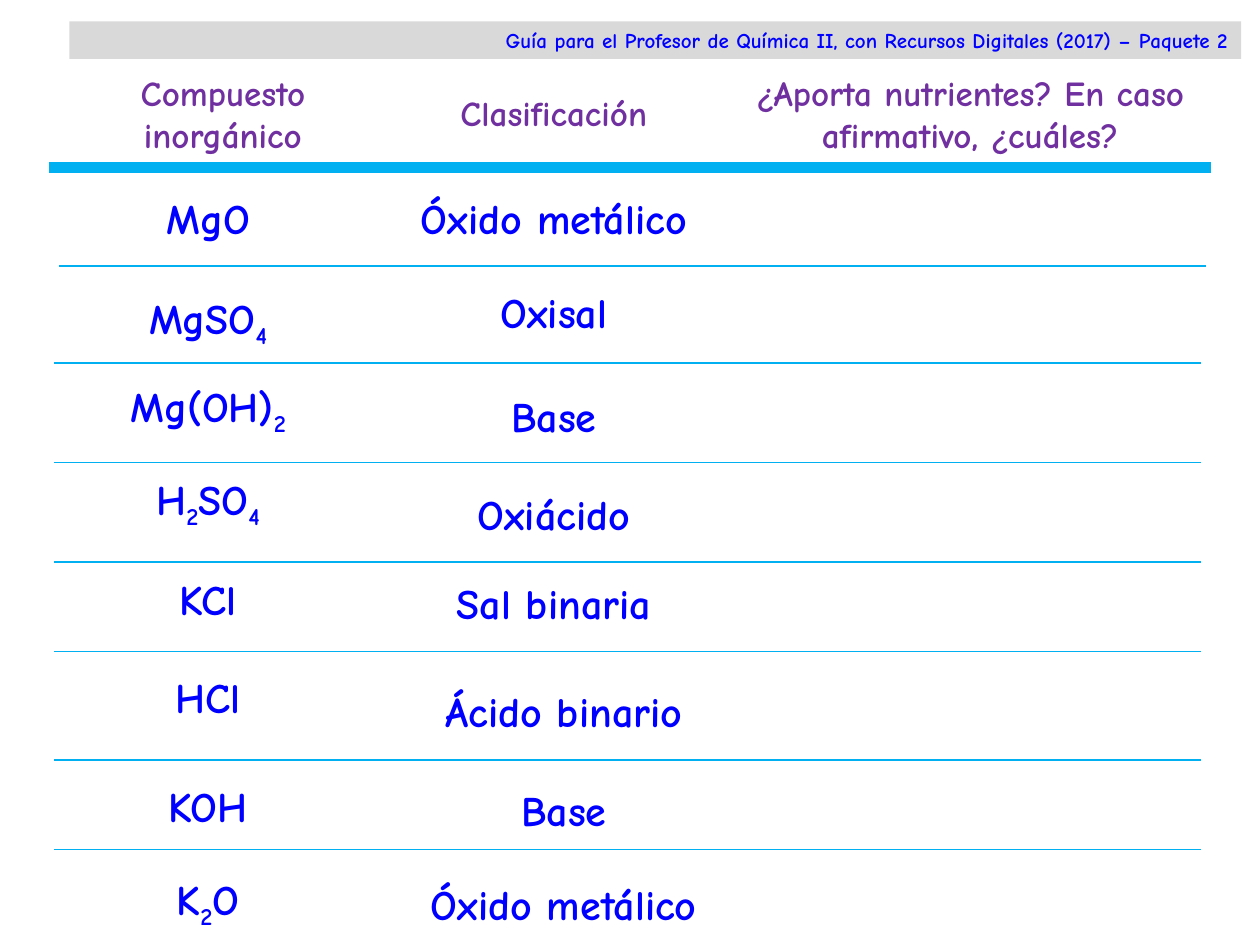
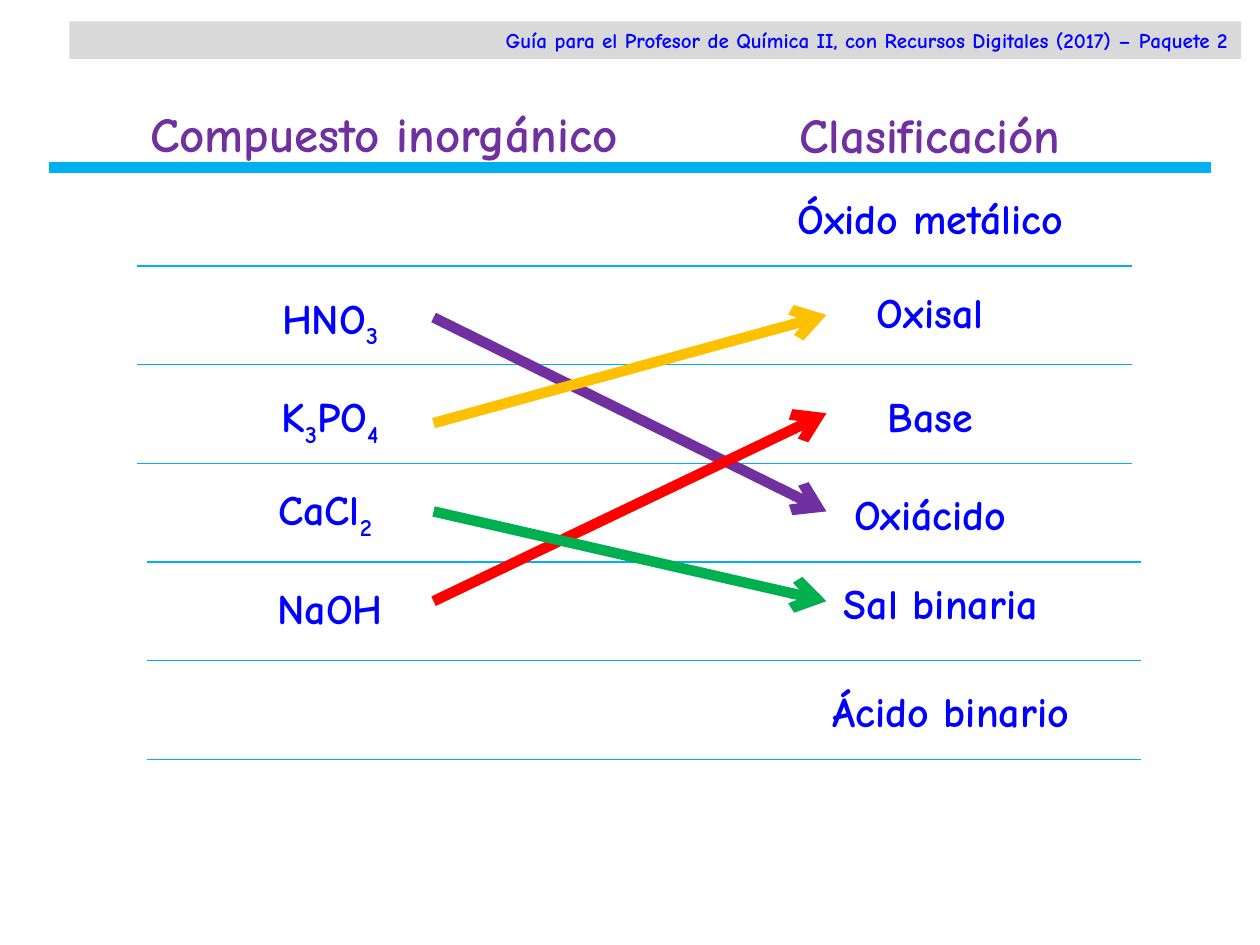
from dataclasses import dataclass
from itertools import groupby

from lxml import etree
from pptx import Presentation
from pptx import util as u
from pptx.dml import color as dml
from pptx.enum import shapes, text
from pptx.oxml import ns


@dataclass(frozen=True)
class Theme:
    face: str = "Comic Neue"
    ink: str = "0000FF"
    head: str = "7030A0"
    rule: str = "00B0F0"
    band: str = "D9D9D9"
    gold: str = "FFC000"
    red: str = "FF0000"
    green: str = "00B050"
    note: float = 12
    small: float = 20
    body: float = 24
    large: float = 28
    thin: float = 0.75
    thick: float = 6.25
    arrow: float = 6


@dataclass(frozen=True)
class Box:
    """A text and its place, in centimetres."""
    words: str
    left: float
    top: float
    width: float
    height: float = 1.27


@dataclass(frozen=True)
class Line:
    """A straight line, in centimetres."""
    x1: float
    y1: float
    x2: float
    y2: float
    hue: str
    size: float
    tip: bool = False


THEME = Theme()
CENTER = text.PP_ALIGN.CENTER
BAND = Box("Guía para el Profesor de Química II, con Recursos Digitales (2017) – Paquete 2",
           1.4, 0.43, 23.62, 0.76)
BAR = Line(0.99, 3.38, 24.41, 3.38, THEME.rule, THEME.thick)
NAME_W, KIND_W = 4.17, 7.75

# Each class with its top, shared by both slides
KINDS = [("Óxido metálico", 3.76), ("Oxisal", 5.66), ("Base", 7.75),
         ("Oxiácido", 9.73), ("Sal binaria", 11.51), ("Ácido binario", 13.69),
         ("Base", 15.7), ("Óxido metálico", 17.58)]

# Slide 1: the full list
LIST_HEADS = [Box("Compuesto inorgánico", 1.09, 1.32, 6.81, 1.96),
              Box("Clasificación", 8.51, 1.73, 5.31, 1.12),
              Box("¿Aporta nutrientes? En caso afirmativo, ¿cuáles?", 14.71, 1.32, 9.7, 1.96)]
LIST_NAMES = [("MgO", 3.76), ("MgSO4", 5.77), ("Mg(OH)2", 7.54), ("H2SO4", 9.42),
              ("KCl", 11.43), ("HCl", 13.41), ("KOH", 15.6), ("K2O", 17.48)]
LIST_RULES = [5.36, 7.32, 9.32, 11.33, 13.13, 15.32, 17.12]

# Slide 2: the matching task
MATCH_HEADS = [Box("Compuesto inorgánico", 1.78, 1.96, 11.91, 1.45),
               Box("Clasificación", 14.68, 1.98, 8.13, 1.45)]
MATCH_NAMES = [("HNO3", 4.57, 5.77), ("K3PO4", 4.57, 7.75),
               ("CaCl2", 4.47, 9.63), ("NaOH", 4.57, 11.61)]
MATCH_LEFTS = [14.88] * 4 + [15.09, 15.29]
MATCH_STEP = 1.99
ARROWS = [(6.4, 10.31, THEME.head), (8.53, 6.35, THEME.gold),
          (12.12, 8.33, THEME.red), (10.31, 12.12, THEME.green)]


def rgb(code: str) -> dml.RGBColor:
    return dml.RGBColor.from_string(code)


def place(box: Box) -> list[u.Cm]:
    return [u.Cm(n) for n in (box.left, box.top, box.width, box.height)]


def style(para, size: float, hue: str, align=CENTER) -> None:
    para.alignment = align
    for run in para.runs:
        font = run.font
        font.name, font.size, font.bold = THEME.face, u.Pt(size), True
        font.color.rgb = rgb(hue)


def write(shape, words: str, size: float, hue: str) -> None:
    frame = shape.text_frame
    frame.word_wrap = True
    frame.auto_size = text.MSO_AUTO_SIZE.NONE
    frame.vertical_anchor = text.MSO_ANCHOR.TOP
    frame.text = words
    style(frame.paragraphs[0], size, hue)


def label(slide, box: Box, size: float = THEME.body, hue: str = THEME.ink):
    shape = slide.shapes.add_textbox(*place(box))
    write(shape, box.words, size, hue)
    return shape


def formula(slide, box: Box) -> None:
    """Draw a chemical formula with its digits as subscripts."""
    para = label(slide, box).text_frame.paragraphs[0]
    para.clear()
    for low, part in groupby(box.words, str.isdigit):
        run = para.add_run()
        run.text = "".join(part)
        if low:
            run.font._element.set("baseline", "-25000")
    style(para, THEME.body, THEME.ink)


def draw(slide, line: Line) -> None:
    ends = [u.Cm(n) for n in (line.x1, line.y1, line.x2, line.y2)]
    link = slide.shapes.add_connector(shapes.MSO_CONNECTOR.STRAIGHT, *ends)
    link.line.color.rgb = rgb(line.hue)
    link.line.width = u.Pt(line.size)
    props = link._element.spPr
    if line.tip:
        etree.SubElement(props.find(ns.qn("a:ln")), ns.qn("a:tailEnd"), type="arrow")
    etree.SubElement(props, ns.qn("a:effectLst"))


def rule(slide, left: float, right: float, top: float) -> None:
    draw(slide, Line(left, top, right, top, THEME.rule, THEME.thin))


def start(deck, heads: list[Box], size: float):
    """Add a slide with the band, the column heads and the thick bar."""
    slide = deck.slides.add_slide(deck.slide_layouts.get_by_name("Title Only"))
    first, *rest = heads
    title = slide.shapes.title
    title.left, title.top, title.width, title.height = place(first)
    write(title, first.words, size, THEME.head)
    for head in rest:
        label(slide, head, size, THEME.head)

    band = slide.shapes.add_shape(shapes.MSO_SHAPE.RECTANGLE, *place(BAND))
    band.shadow.inherit = False
    band.fill.solid()
    band.fill.fore_color.rgb = rgb(THEME.band)
    band.line.fill.background()
    write(band, BAND.words, THEME.note, THEME.ink)
    band.text_frame.vertical_anchor = text.MSO_ANCHOR.MIDDLE
    band.text_frame.paragraphs[0].alignment = text.PP_ALIGN.RIGHT
    draw(slide, BAR)
    return slide


def list_slide(deck) -> None:
    slide = start(deck, LIST_HEADS, THEME.small)
    for name, top in LIST_NAMES:
        formula(slide, Box(name, 2.11, top, NAME_W))
    for row, (kind, top) in enumerate(KINDS):
        label(slide, Box(kind, 7.29 if row < 5 else 7.49, top, KIND_W))
    for row, top in enumerate(LIST_RULES):
        left = 1.09 if row else 1.19
        rule(slide, left, left + 23.12, top)


def match_slide(deck) -> None:
    slide = start(deck, MATCH_HEADS, THEME.large)
    for name, left, top in MATCH_NAMES:
        formula(slide, Box(name, left, top, NAME_W))
    for (kind, top), left in zip(KINDS, MATCH_LEFTS):
        label(slide, Box(kind, left, top, KIND_W))
    for row in range(6):
        left = 2.77 if row < 3 else 2.97
        rule(slide, left, left + 20.04, 5.36 + row * MATCH_STEP)
    for y1, y2, hue in ARROWS:
        draw(slide, Line(8.74, y1, 16.66, y2, hue, THEME.arrow, True))


def main() -> None:
    deck = Presentation()
    deck.slide_width, deck.slide_height = u.Cm(25.4), u.Cm(19.05)
    list_slide(deck)
    match_slide(deck)
    deck.save("out.pptx")


if __name__ == "__main__":
    main()
